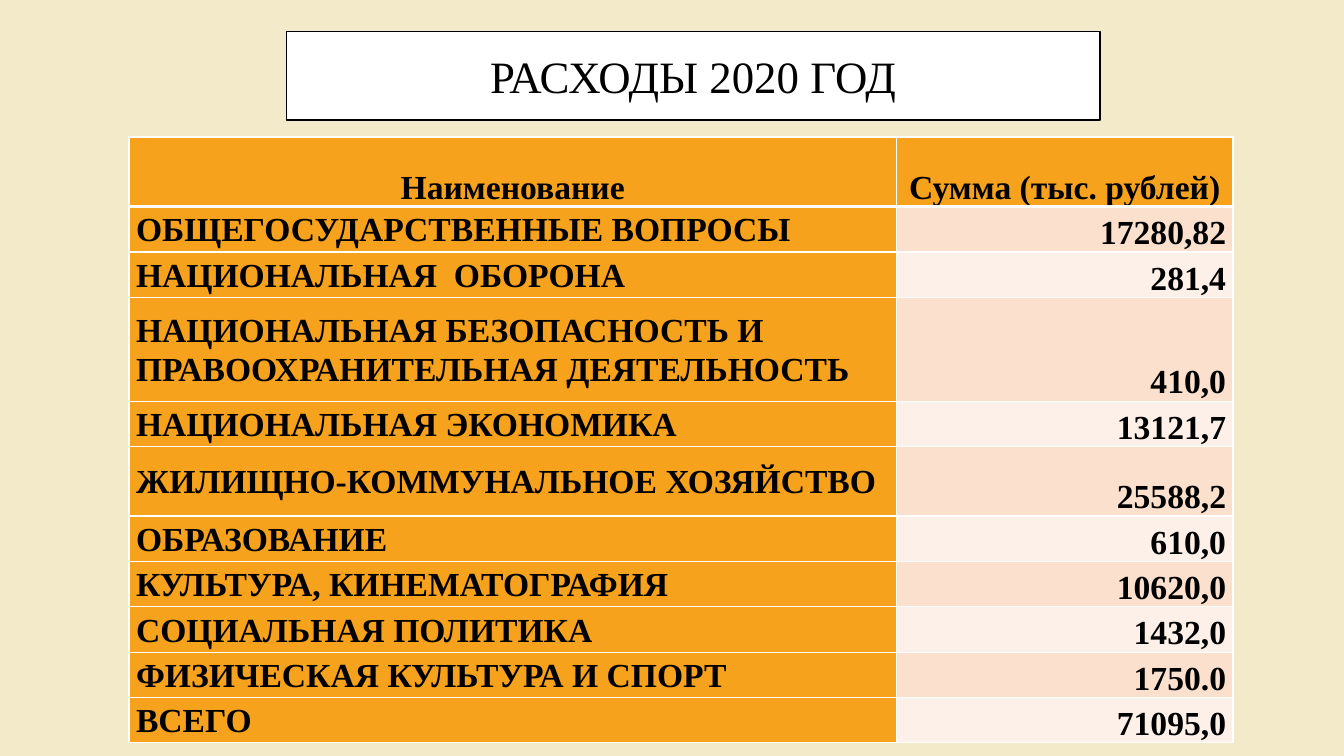
from dataclasses import dataclass

from lxml.etree import SubElement
from pptx import Presentation
from pptx.dml.color import RGBColor as Rgb
from pptx.enum.shapes import MSO_SHAPE as Shape
from pptx.enum.text import MSO_ANCHOR as Anchor, PP_ALIGN as Align
from pptx.oxml.ns import qn
from pptx.util import Emu, Pt

PX = 9144  # EMU in one px, 100 px to the inch
FONT = "Times New Roman"
HUES = {
    "page": "F2EAC8",
    "white": "FFFFFF",
    "black": "000000",
    "gold": "F6A21D",
    "peach": "FBE0CD",
    "cream": "FDF0E8",
}


@dataclass
class Item:
    name: str
    sum: str
    high: int = 45
    side: Align = Align.JUSTIFY


HEAD = Item("Наименование", "Сумма (тыс. рублей)", 69, Align.CENTER)
ITEMS = [
    Item("ОБЩЕГОСУДАРСТВЕННЫЕ ВОПРОСЫ", "17280,82"),
    Item("НАЦИОНАЛЬНАЯ  ОБОРОНА", "281,4"),
    Item("НАЦИОНАЛЬНАЯ БЕЗОПАСНОСТЬ И ПРАВООХРАНИТЕЛЬНАЯ ДЕЯТЕЛЬНОСТЬ",
         "410,0", 103, Align.LEFT),
    Item("НАЦИОНАЛЬНАЯ ЭКОНОМИКА", "13121,7"),
    Item("ЖИЛИЩНО-КОММУНАЛЬНОЕ ХОЗЯЙСТВО", "25588,2", 69),
    Item("ОБРАЗОВАНИЕ", "610,0"),
    Item("КУЛЬТУРА, КИНЕМАТОГРАФИЯ", "10620,0"),
    Item("СОЦИАЛЬНАЯ ПОЛИТИКА", "1432,0"),
    Item("ФИЗИЧЕСКАЯ КУЛЬТУРА И СПОРТ", "1750.0"),
    Item("ВСЕГО", "71095,0"),
]
COLS = (761, 334)


def px(num: int) -> Emu:
    return Emu(num * PX)


def hue(key: str) -> Rgb:
    return Rgb.from_string(HUES[key])


def paint(fill, key: str) -> None:
    fill.solid()
    fill.fore_color.rgb = hue(key)


def write(frame, text: str, side: Align, size: int, bold: bool) -> None:
    par = frame.paragraphs[0]
    par.alignment = side
    run = par.add_run()
    run.text = text
    for key, val in {"name": FONT, "size": Pt(size), "bold": bold}.items():
        setattr(run.font, key, val)
    run.font.color.rgb = hue("black")


def edge(cell, low: int, top: int) -> None:
    """Draw white borders, with the widths of bottom and top in points."""
    props = cell._tc.get_or_add_tcPr()
    wides = {"lnL": 1, "lnR": 1, "lnT": top, "lnB": low}
    for spot, (tag, wide) in enumerate(wides.items()):
        line = SubElement(props, qn(f"a:{tag}"), w=str(Pt(wide)))
        fill = SubElement(line, qn("a:solidFill"))
        SubElement(fill, qn("a:srgbClr"), val=HUES["white"])
        props.insert(spot, line)  # borders go before the fill


def put(cell, text: str, side: Align, anchor: Anchor, key: str) -> None:
    form = {
        "margin_left": px(7), "margin_right": px(7),
        "margin_top": 0, "margin_bottom": 0,
        "vertical_anchor": anchor,
    }
    for name, val in form.items():
        setattr(cell, name, val)
    paint(cell.fill, key)
    write(cell.text_frame, text, side, 24, True)
    cell.text_frame.paragraphs[0].line_spacing = 1.07


def grid(slide) -> None:
    rows = [HEAD, *ITEMS]
    high = sum(item.high for item in rows)
    table = slide.shapes.add_table(
        len(rows), len(COLS), px(128), px(136), px(sum(COLS)), px(high)).table
    for col, wide in zip(table.columns, COLS):
        col.width = px(wide)
    for num, item in enumerate(rows):
        table.rows[num].height = px(item.high)
        name, cost = table.cell(num, 0), table.cell(num, 1)
        if num == 0:
            put(name, item.name, item.side, Anchor.BOTTOM, "gold")
            put(cost, item.sum, item.side, Anchor.BOTTOM, "gold")
        else:
            band = "peach" if num % 2 else "cream"
            put(name, item.name, item.side, Anchor.MIDDLE, "gold")
            put(cost, item.sum, Align.RIGHT, Anchor.BOTTOM, band)
        for cell in (name, cost):
            edge(cell, 3 if num == 0 else 1, 3 if num == 1 else 1)


def title(slide) -> None:
    box = slide.shapes.add_shape(
        Shape.RECTANGLE, px(284), px(31), px(807), px(88))
    box.shadow.inherit = False
    paint(box.fill, "white")
    box.line.color.rgb = hue("black")
    box.line.width = Pt(1)
    box.text_frame.word_wrap = True
    box.text_frame.vertical_anchor = Anchor.MIDDLE
    write(box.text_frame, "РАСХОДЫ 2020 ГОД", Align.CENTER, 32, False)


def main() -> None:
    deck = Presentation()
    deck.slide_width, deck.slide_height = px(1333), px(750)
    slide = deck.slides.add_slide(deck.slide_layouts[6])
    paint(slide.background.fill, "page")
    # Table of costs, then the heading above it
    grid(slide)
    title(slide)
    deck.save("out.pptx")


if __name__ == "__main__":
    main()
